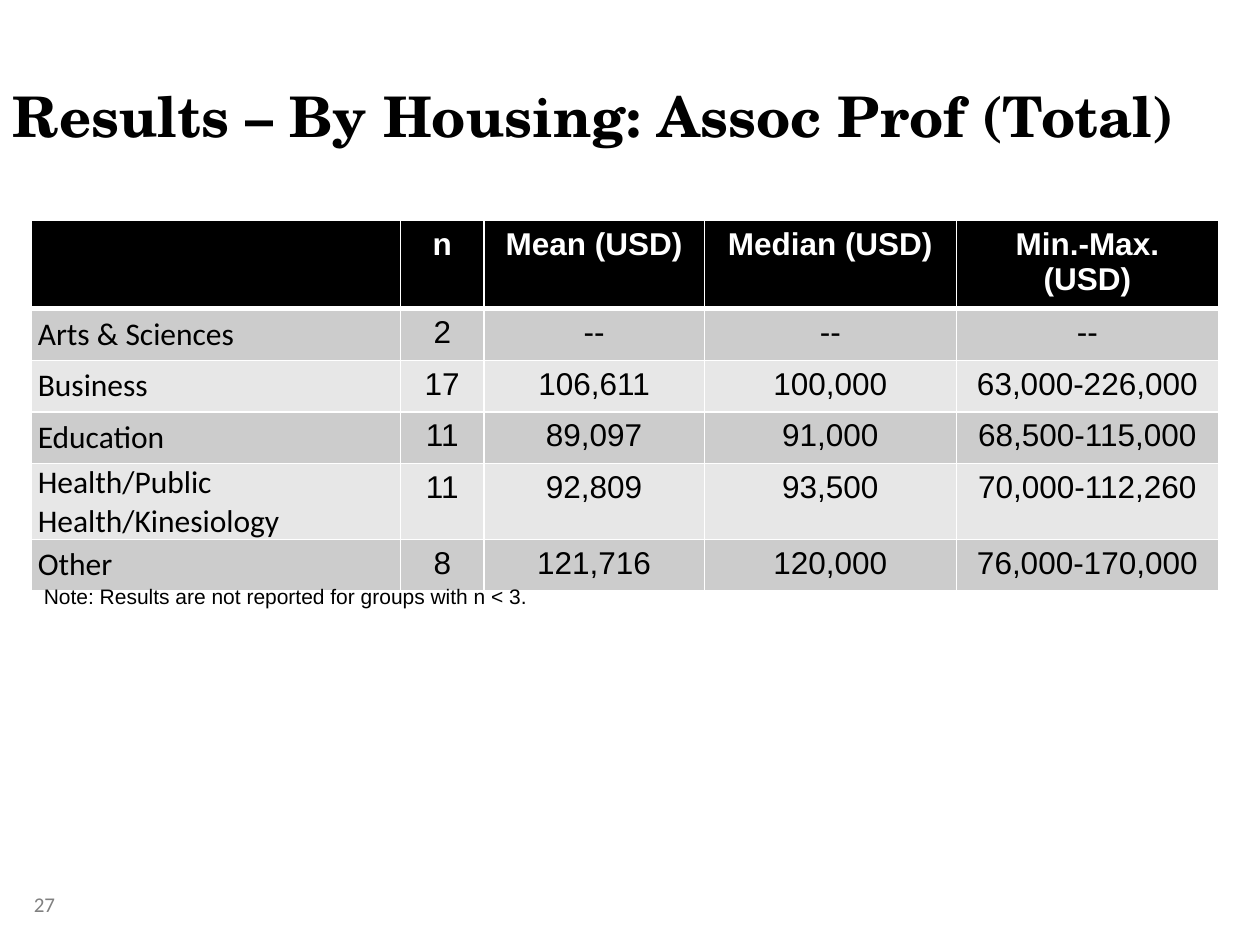
from lxml import etree
from pptx import Presentation
from pptx import util as u
from pptx.dml import color
from pptx.enum import text
from pptx.oxml import ns

COLUMN_WIDTHS = [2.93, 0.66, 1.75, 2, 2.08]
ROW_HEIGHT = 0.41
ROWS = [
    ["", "n", "Mean (USD)", "Median (USD)", "Min.-Max. (USD)"],
    ["Arts & Sciences", "2", "--", "--", "--"],
    ["Business", "17", "106,611", "100,000", "63,000-226,000"],
    ["Education", "11", "89,097", "91,000", "68,500-115,000"],
    ["Health/Public Health/Kinesiology", "11", "92,809", "93,500", "70,000-112,260"],
    ["Other", "8", "121,716", "120,000", "76,000-170,000"],
]


def rgb(value):
    return color.RGBColor.from_string(value)


class SlideBuilder:
    title_font = "TeX Gyre Schola"
    body_font = "Arial"
    label_font = "Calibri"
    black, white, gray = "000000", "FFFFFF", "808080"
    bands = ["CCCCCC", "E7E7E7"]

    def __init__(self, prs):
        self.s = prs.slides.add_slide(prs.slide_layouts[5])

    def format_text(self, tf, size, font, fill, bold=False, align=text.PP_ALIGN.LEFT):
        for p in tf.paragraphs:
            p.alignment = align
            for r in p.runs:
                r.font.size = u.Pt(size)
                r.font.name = font
                r.font.bold = bold
                r.font.color.rgb = rgb(fill)

    def title(self, wording, left, top, width, height):
        sp = self.s.shapes.title
        sp.left, sp.top = u.Inches(left), u.Inches(top)
        sp.width, sp.height = u.Inches(width), u.Inches(height)
        tf = sp.text_frame
        tf.text = wording
        tf.vertical_anchor = text.MSO_ANCHOR.BOTTOM
        tf.auto_size = text.MSO_AUTO_SIZE.NONE
        self.format_text(tf, 32, self.title_font, self.black, bold=True)

    def text_box(self, wording, left, top, width, height, font, fill):
        sp = self.s.shapes.add_textbox(
            u.Inches(left), u.Inches(top), u.Inches(width), u.Inches(height)
        )
        tf = sp.text_frame
        tf.word_wrap = True
        tf.text = wording
        self.format_text(tf, 12, font, fill)

    def borders(self, cell, bottom, top):
        tc_pr = cell._tc.get_or_add_tcPr()
        for side, width in {"L": 1, "R": 1, "T": top, "B": bottom}.items():
            ln = etree.SubElement(tc_pr, ns.qn(f"a:ln{side}"), w=str(u.Pt(width)))
            solid = etree.SubElement(ln, ns.qn("a:solidFill"))
            etree.SubElement(solid, ns.qn("a:srgbClr"), val=self.white)

    def cell(self, cell, wording, row, column):
        header, label = row == 0, row > 0 and column == 0
        self.borders(cell, bottom=3 if header else 1, top=3 if row == 1 else 1)
        cell.fill.solid()
        cell.fill.fore_color.rgb = rgb(self.black if header else self.bands[(row - 1) % 2])
        cell.text_frame.text = wording
        if label:
            cell.vertical_anchor = text.MSO_ANCHOR.MIDDLE
            cell.margin_left = cell.margin_right = u.Inches(0.05)
            cell.margin_top = cell.margin_bottom = 0
        self.format_text(
            cell.text_frame,
            18,
            self.label_font if label else self.body_font,
            self.white if header else self.black,
            bold=header,
            align=text.PP_ALIGN.LEFT if label else text.PP_ALIGN.CENTER,
        )

    def table(self, rows, widths, left, top):
        table = self.s.shapes.add_table(
            len(rows), len(widths), u.Inches(left), u.Inches(top),
            u.Inches(sum(widths)), u.Inches(ROW_HEIGHT * len(rows)),
        ).table
        for column, width in zip(table.columns, widths):
            column.width = u.Inches(width)
        for i, row in enumerate(rows):
            table.rows[i].height = u.Inches(ROW_HEIGHT)
            for j, wording in enumerate(row):
                self.cell(table.cell(i, j), wording, i, j)


def main():
    prs = Presentation()
    prs.slide_width, prs.slide_height = u.Inches(10), u.Inches(7.5)
    slide = SlideBuilder(prs)
    slide.text_box("27", 0.17, 7.03, 0.92, 0.55, slide.label_font, slide.gray)
    slide.title("Results – By Housing: Assoc Prof (Total)", 0, 0.3, 10, 0.93)
    slide.table(ROWS, COLUMN_WIDTHS, 0.25, 1.75)
    slide.text_box(
        "Note: Results are not reported for groups with n < 3.",
        0.25, 4.58, 9.13, 0.3, slide.body_font, slide.black,
    )
    prs.save("out.pptx")


if __name__ == "__main__":
    main()
